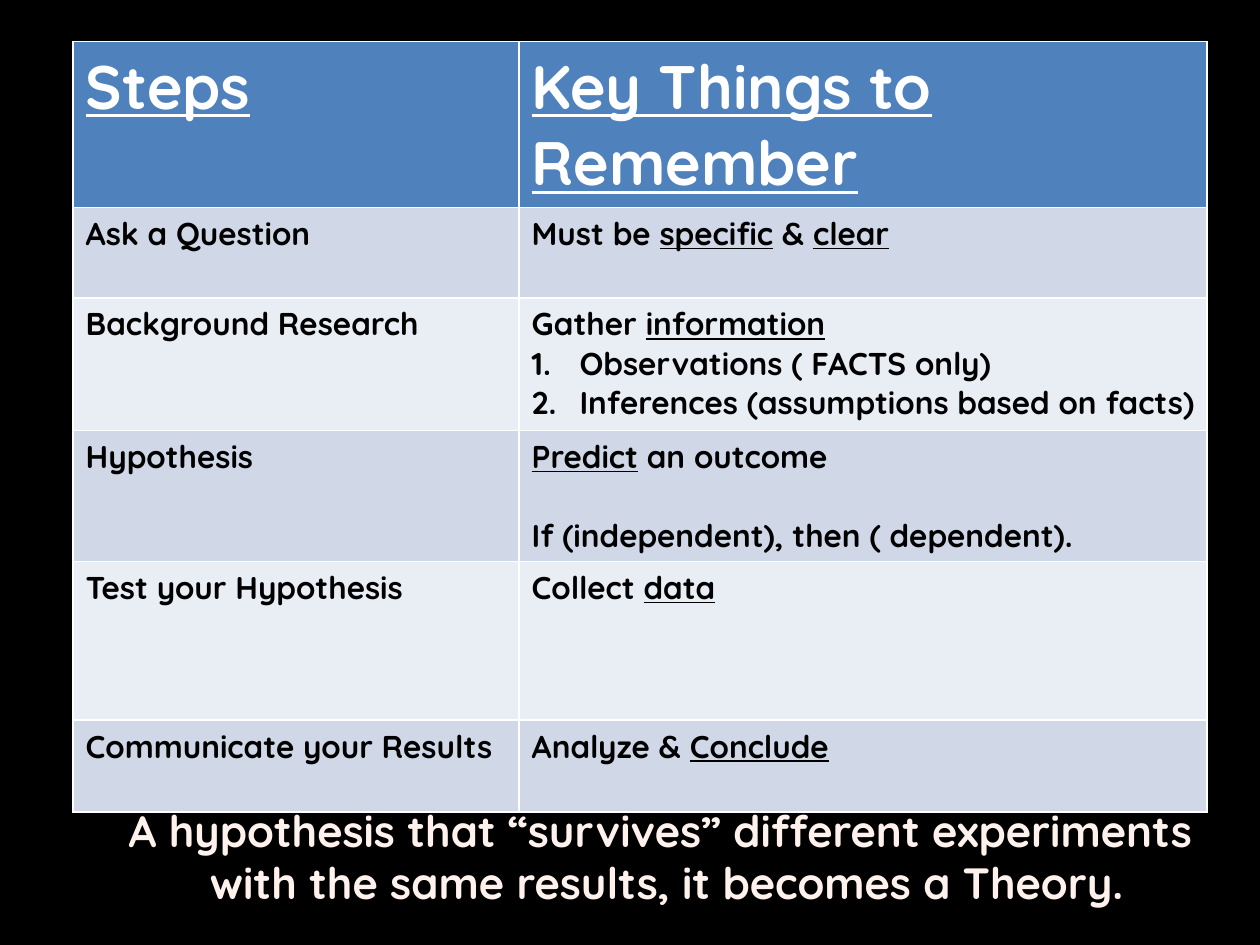
from dataclasses import dataclass

from lxml import etree
from pptx import Presentation
from pptx.dml.color import RGBColor
from pptx.enum import text
from pptx.oxml import ns
from pptx.util import Inches, Pt

BLACK = RGBColor(0x00, 0x00, 0x00)
WHITE = RGBColor(0xFF, 0xFF, 0xFF)
BLUE = RGBColor(0x4F, 0x81, 0xBD)
BAND_DARK = RGBColor(0xD0, 0xD8, 0xE8)
BAND_LIGHT = RGBColor(0xE9, 0xED, 0xF4)
CREAM = RGBColor(0xFF, 0xF2, 0xED)

MARK = "_"
HEADER_FONT = {"size": Pt(35), "name": "Quicksand", "bold": True}
BODY_FONT = {"size": Pt(18), "name": "Quicksand", "bold": True}
CAPTION_FONT = {"size": Pt(25), "name": "Quicksand", "bold": True}


@dataclass
class Para:
    text: str
    numbered: bool = False
    gap: float = 0


@dataclass
class Row:
    height: float
    step: str
    notes: list[Para]


ROWS = [
    Row(1.31, "_Steps_", [Para("_Key Things to Remember_")]),
    Row(0.72, "Ask a Question", [Para("Must be _specific_ & _clear_")]),
    Row(1.05, "Background Research", [
        Para("Gather _information_"),
        Para("Observations ( FACTS only)", numbered=True),
        Para("Inferences (assumptions based on facts)", numbered=True),
    ]),
    Row(1.04, "Hypothesis", [
        Para("_Predict_ an outcome"),
        Para("If (independent), then ( dependent).", gap=22.5),
    ]),
    Row(1.26, "Test your Hypothesis", [Para("Collect _data_")]),
    Row(0.73, "Communicate your Results", [Para("Analyze & _Conclude_")]),
]
COLUMNS = [3.54, 5.46]
CAPTION = [
    "A hypothesis that “survives” different experiments ",
    "with the same results, it becomes a Theory.",
]


def set_font(font, values: dict, color: RGBColor) -> None:
    for name, value in values.items():
        setattr(font, name, value)
    font.color.rgb = color


def number(p) -> None:
    pPr = p._p.get_or_add_pPr()
    pPr.set("marL", str(Inches(0.38)))
    pPr.set("indent", str(-Inches(0.38)))
    etree.SubElement(pPr, ns.qn("a:buFont"), typeface="+mj-lt")
    etree.SubElement(pPr, ns.qn("a:buAutoNum"), type="arabicPeriod")


def add_border(cell, side: str) -> None:
    tcPr = cell._tc.get_or_add_tcPr()
    ln = etree.SubElement(tcPr, ns.qn(f"a:ln{side}"), w=str(Pt(1)))
    fill = etree.SubElement(ln, ns.qn("a:solidFill"))
    etree.SubElement(fill, ns.qn("a:srgbClr"), val=str(WHITE))


def fill_cell(cell, paras: list[Para], row: int) -> None:
    header = row == 0
    for side in "LRTB":
        add_border(cell, side)
    cell.margin_right = Inches(0.04)
    cell.fill.solid()
    cell.fill.fore_color.rgb = BLUE if header else (BAND_LIGHT, BAND_DARK)[row % 2]
    tf = cell.text_frame
    for i, para in enumerate(paras):
        p = tf.add_paragraph() if i else tf.paragraphs[0]
        if para.gap:
            p.space_before = Pt(para.gap)
        if para.numbered:
            number(p)
        for j, part in enumerate(para.text.split(MARK)):
            if part:
                r = p.add_run()
                r.text = part
                set_font(r.font, HEADER_FONT if header else BODY_FONT,
                         WHITE if header else BLACK)
                r.font.underline = j % 2 == 1


def add_steps(s) -> None:
    frame = s.shapes.add_table(
        len(ROWS), len(COLUMNS), Inches(0.58), Inches(0.33),
        Inches(sum(COLUMNS)), Inches(sum(row.height for row in ROWS)))
    table = frame.table
    for column, width in zip(table.columns, COLUMNS):
        column.width = Inches(width)
    for i, row in enumerate(ROWS):
        table.rows[i].height = Inches(row.height)
        fill_cell(table.cell(i, 0), [Para(row.step)], i)
        fill_cell(table.cell(i, 1), row.notes, i)


def add_caption(s) -> None:
    sp = s.shapes.add_textbox(Inches(0.58), Inches(6.33), Inches(9.42), Inches(0.94))
    tf = sp.text_frame
    tf.word_wrap = True
    tf.auto_size = text.MSO_AUTO_SIZE.SHAPE_TO_FIT_TEXT
    p = tf.paragraphs[0]
    p.alignment = text.PP_ALIGN.CENTER
    for i, line in enumerate(CAPTION):
        if i:
            p.add_line_break()
        r = p.add_run()
        r.text = line
        set_font(r.font, CAPTION_FONT, CREAM)


def main() -> None:
    prs = Presentation()
    prs.slide_width, prs.slide_height = Inches(10), Inches(7.5)
    s = prs.slides.add_slide(prs.slide_layouts[6])
    s.background.fill.solid()
    s.background.fill.fore_color.rgb = BLACK
    add_steps(s)
    add_caption(s)
    prs.save("out.pptx")


if __name__ == "__main__":
    main()
